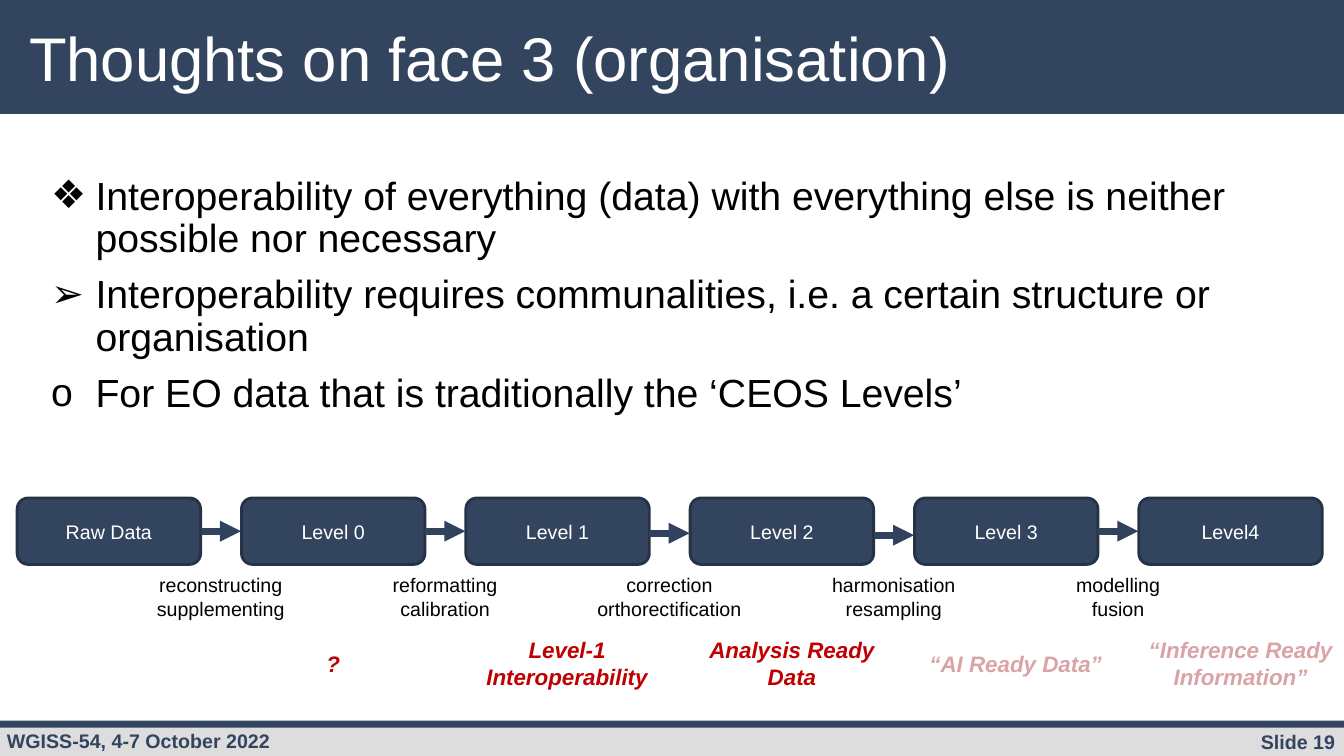
from lxml import etree
from pptx import Presentation
from pptx.dml.color import RGBColor
from pptx.enum import shapes, text
from pptx.oxml import ns
from pptx.util import Inches, Pt

NAVY, RED, PINK = "33445F", "C00000", "DAA3A6"
LEFT, CENTER, RIGHT = text.PP_ALIGN.LEFT, text.PP_ALIGN.CENTER, text.PP_ALIGN.RIGHT
TOP, MIDDLE = text.MSO_ANCHOR.TOP, text.MSO_ANCHOR.MIDDLE
RECT, ROUNDED = shapes.MSO_SHAPE.RECTANGLE, shapes.MSO_SHAPE.ROUNDED_RECTANGLE

deck = Presentation()
deck.slide_width, deck.slide_height = Inches(13.33), Inches(7.5)
slide = deck.slides.add_slide(deck.slide_layouts[6])


def add_block(kind, left, top, width, height, fill=None, outline=None):
    block = slide.shapes.add_shape(kind, Inches(left), Inches(top), Inches(width), Inches(height))
    block.shadow.inherit = False
    if fill:
        block.fill.solid()
        block.fill.fore_color.rgb = RGBColor.from_string(fill)
    else:
        block.fill.background()
    if outline:
        block.line.color.rgb = RGBColor.from_string(outline)
        block.line.width = Pt(2)
    else:
        block.line.fill.background()
    return block


def write(block, lines, size, color, align=CENTER, anchor=MIDDLE, bold=False, italic=False):
    frame = block.text_frame
    frame.word_wrap = True
    frame.vertical_anchor = anchor
    for i, line in enumerate(lines):
        paragraph = frame.paragraphs[0] if i == 0 else frame.add_paragraph()
        paragraph.alignment = align
        run = paragraph.add_run()
        run.text = line
        run.font.name = "Arial"
        run.font.size = Pt(size)
        run.font.bold = bold
        run.font.italic = italic
        run.font.color.rgb = RGBColor.from_string(color)
    return frame.paragraphs


add_block(RECT, 0, 0, 13.33, 1.13, NAVY)
add_block(RECT, 0, 7.19, 13.33, 0.31, "DDDDDD")
add_block(RECT, 0, 7.15, 13.33, 0.07, NAVY)

slide_number = slide.shapes.add_textbox(Inches(11.23), Inches(7.19), Inches(2.11), Inches(0.34))
write(slide_number, ["Slide 19"], 14, NAVY, RIGHT, TOP, bold=True)
meeting = slide.shapes.add_textbox(Inches(-0.03), Inches(7.18), Inches(5.39), Inches(0.34))
write(meeting, ["WGISS-54, 4-7 October 2022"], 14, NAVY, LEFT, TOP, bold=True)

title = slide.shapes.add_textbox(Inches(0.19), Inches(0.19), Inches(10.27), Inches(0.85))
write(title, ["Thoughts on face 3 (organisation)"], 44, "FFFFFF", LEFT)[0].line_spacing = 0.9

thoughts = [
    ("❖", "Interoperability of everything (data) with everything else is neither possible nor necessary"),
    ("➢", "Interoperability requires communalities, i.e. a certain structure or organisation"),
    ("o", "For EO data that is traditionally the ‘CEOS Levels’"),
]
body = slide.shapes.add_textbox(Inches(0.35), Inches(1.7), Inches(12.57), Inches(2.77))
body_lines = write(body, [thought for _, thought in thoughts], 28, "000000", LEFT, TOP)
for i, (paragraph, (mark, _)) in enumerate(zip(body_lines, thoughts)):
    paragraph.line_spacing = 0.9
    paragraph.space_before = Pt(10 if i else 0)
    props = paragraph._p.get_or_add_pPr()
    props.set("marL", str(Inches(0.5)))
    props.set("indent", str(Inches(-0.44)))
    etree.SubElement(props, ns.qn("a:buFont"), typeface="Arial")
    etree.SubElement(props, ns.qn("a:buChar"), char=mark)

STEP = 2.225
processes = [
    ["reconstructing", "supplementing"],
    ["reformatting", "calibration"],
    ["correction", "orthorectification"],
    ["harmonisation", "resampling"],
    ["modelling", "fusion"],
]
for i, process in enumerate(processes):
    write(add_block(ROUNDED, 1.28 + i * STEP, 5.59, 1.82, 0.66), process, 14, "000000")

levels = ["Raw Data", "Level 0", "Level 1", "Level 2", "Level 3", "Level4"]
for i, level in enumerate(levels):
    write(add_block(ROUNDED, 0.17 + i * STEP, 4.94, 1.82, 0.66, NAVY, "263246"), [level], 14, "FFFFFF")

for i, y in enumerate([5.27, 5.27, 5.29, 5.31, 5.27]):
    start = 1.99 + i * STEP
    arrow = slide.shapes.add_connector(
        shapes.MSO_CONNECTOR.STRAIGHT, Inches(start), Inches(y), Inches(start + 0.4), Inches(y))
    arrow.line.color.rgb = RGBColor.from_string("31425E")
    arrow.line.width = Pt(5)
    etree.SubElement(arrow.line._get_or_add_ln(), ns.qn("a:tailEnd"), type="triangle")
    etree.SubElement(arrow._element.spPr, ns.qn("a:effectLst"))

readiness = [
    (2.19, ["?"], RED),
    (4.51, ["Level-1", "Interoperability"], RED),
    (6.74, ["Analysis Ready Data"], RED),
    (8.96, ["“AI Ready Data”"], PINK),
    (11.19, ["“Inference Ready Information”"], PINK),
]
for left, label, color in readiness:
    write(add_block(ROUNDED, left, 6.25, 2.23, 0.66), label, 16, color, bold=True, italic=True)

deck.save("out.pptx")
